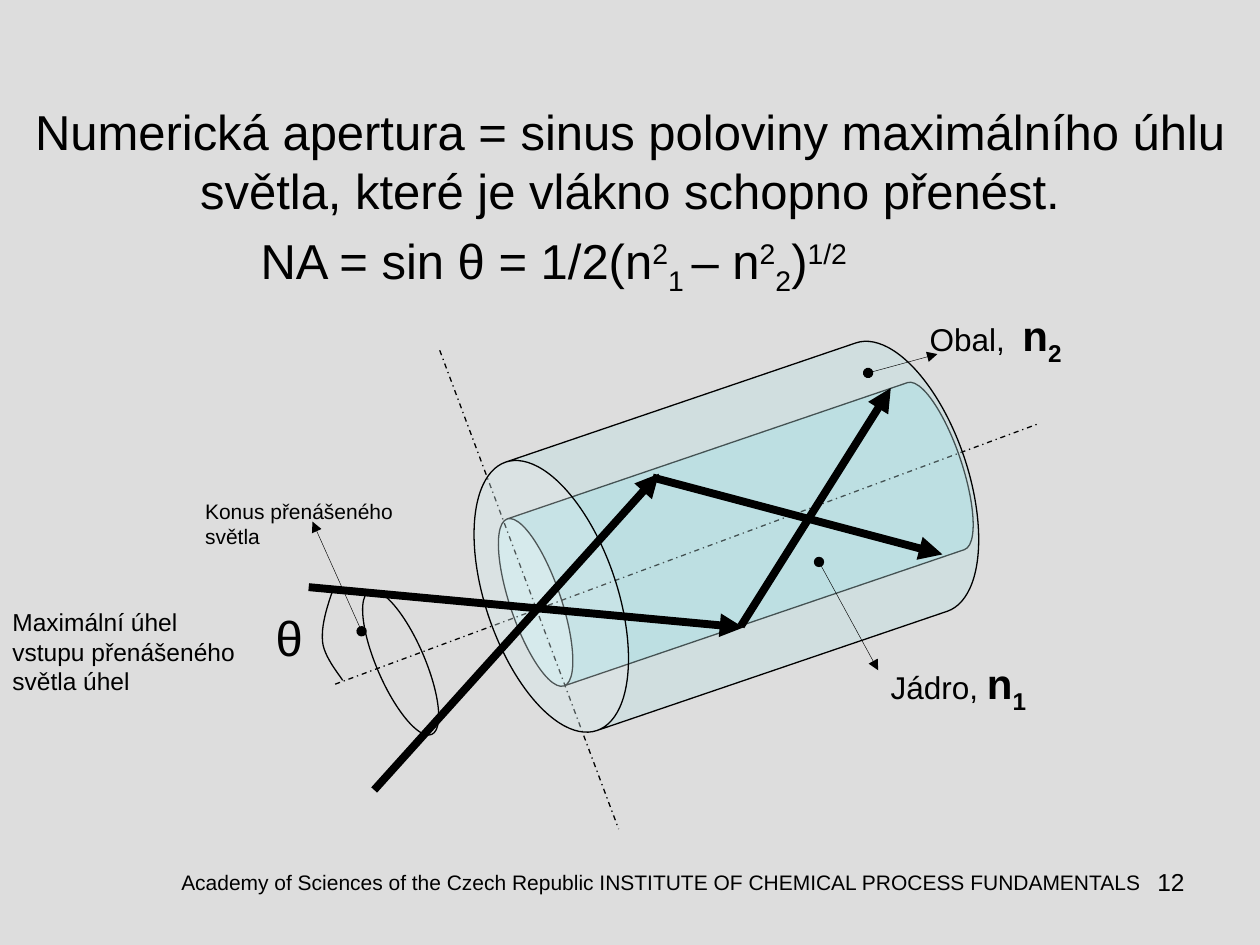
from lxml import etree
from pptx import Presentation
from pptx.dml.color import RGBColor
from pptx.enum.dml import MSO_LINE
from pptx.enum.shapes import MSO_CONNECTOR, MSO_SHAPE
from pptx.enum.text import MSO_ANCHOR, PP_ALIGN
from pptx.oxml.ns import qn
from pptx.util import Inches, Pt

BACKGROUND = RGBColor(0xDD, 0xDD, 0xDD)
BLACK = RGBColor(0x00, 0x00, 0x00)
GLASS = RGBColor(0xBB, 0xE0, 0xE3)
FONT = "Arial"
SUP, SUB = 30, -25
FIBRE_ANGLE = 251.2


def add_text(slide, box, runs, align=PP_ALIGN.LEFT, anchor=MSO_ANCHOR.TOP, inset=None):
    """Add one paragraph; each run is (text, size, baseline %, bold)."""
    frame = slide.shapes.add_textbox(*map(Inches, box)).text_frame
    frame.word_wrap = True
    frame.vertical_anchor = anchor
    if inset is not None:
        frame.margin_left = frame.margin_right = Inches(inset)
        frame.margin_top = frame.margin_bottom = Inches(inset)
    paragraph = frame.paragraphs[0]
    paragraph.alignment = align
    for text, size, baseline, bold in runs:
        run = paragraph.add_run()
        run.text = text
        run.font.name = FONT
        run.font.size = Pt(size)
        run.font.bold = bold
        run.font.color.rgb = BLACK
        if baseline:
            run._r.get_or_add_rPr().set("baseline", str(baseline * 1000))


def plain(text, size):
    return (text, size, 0, False)


def add_line(slide, start, end, width, head=None, tail=None, dash=None):
    line = slide.shapes.add_connector(
        MSO_CONNECTOR.STRAIGHT, *map(Inches, (*start, *end)))
    line.line.color.rgb = BLACK
    line.line.width = Pt(width)
    if dash:
        line.line.dash_style = dash
    outline = line.line._get_or_add_ln()
    for tag, kind in (("a:headEnd", head), ("a:tailEnd", tail)):
        if kind:
            etree.SubElement(outline, qn(tag)).set("type", kind)
    etree.SubElement(line._element.spPr, qn("a:effectLst"))


def style_outline(shape, opacity=None):
    """Thin black outline, with a translucent glass fill if opacity is given."""
    shape.shadow.inherit = False
    shape.line.color.rgb = BLACK
    shape.line.width = Pt(0.75)
    if opacity is None:
        shape.fill.background()
        return
    shape.fill.solid()
    shape.fill.fore_color.rgb = GLASS
    colour = shape._element.spPr.find(qn("a:solidFill"))[0]
    etree.SubElement(colour, qn("a:alpha")).set("val", str(opacity * 1000))


def add_cylinder(slide, box, depth, opacity):
    cylinder = slide.shapes.add_shape(MSO_SHAPE.CAN, *map(Inches, box))
    cylinder.adjustments[0] = depth
    cylinder.rotation = FIBRE_ANGLE
    style_outline(cylinder, opacity)


def bezier(p0, p1, p2, p3, steps=12):
    for i in range(1, steps + 1):
        t = i / steps
        u = 1 - t
        yield tuple(u**3 * a + 3 * u * u * t * b + 3 * u * t * t * c + t**3 * d
                    for a, b, c, d in zip(p0, p1, p2, p3))


def add_heading(slide, left, top, width):
    """Definition of the numerical aperture and its formula."""
    definition = ("Numerická apertura = sinus poloviny maximálního úhlu světla, "
                  "které je vlákno schopno přenést.")
    add_text(slide, (left, top, width, 1.95), [plain(definition, 28)],
             PP_ALIGN.CENTER, MSO_ANCHOR.MIDDLE)
    formula = [("NA = sin θ = 1/2(n", 0), ("2", SUP), ("1 ", SUB), ("– n", 0),
               ("2", SUP), ("2", SUB), (")", 0), ("1/2", SUP)]
    add_text(slide, (left + 1.97, top + 1.48, 6.06, 0.57),
             [(text, 28, baseline, False) for text, baseline in formula])


def add_fibre(slide, left, top):
    """Fibre with its axes, light rays and entry cone."""
    def at(x, y, *size):
        return (left + x, top + y, *size)

    # Core, axes, then the cladding over them
    add_cylinder(slide, at(5.14, 0.36, 1.4, 3.76), 0.288, 86)
    for start, end in [((2.66, 3.43), (8.25, 1.36)), ((3.49, 0.78), (4.91, 4.58))]:
        add_line(slide, at(*start), at(*end), 0.75, dash=MSO_LINE.DASH_DOT)
    add_cylinder(slide, at(4.64, 0.27, 2.25, 3.98), 0.464, 37)

    # Light rays
    for start, end in [((2.45, 2.66), (5.9, 2.98)), ((2.97, 4.27), (5.23, 1.76)),
                       ((5.88, 2.97), (7.07, 1.08)), ((5.18, 1.79), (7.48, 2.4))]:
        add_line(slide, at(*start), at(*end), 4.5, tail="triangle")

    # Entry cone and angle arc
    cone = slide.shapes.add_shape(
        MSO_SHAPE.OVAL, *map(Inches, at(2.99, 2.64, 0.38, 1.24)))
    cone.rotation = 336.6
    style_outline(cone)
    begin, middle, end = at(2.64, 2.69), at(2.56, 3.09), at(2.72, 3.4)
    points = [*bezier(begin, at(2.59, 2.83), at(2.55, 2.97), middle),
              *bezier(middle, at(2.57, 3.21), at(2.69, 3.35), end)]
    builder = slide.shapes.build_freeform(*map(Inches, begin))
    builder.add_line_segments([(Inches(x), Inches(y)) for x, y in points], close=False)
    style_outline(builder.convert_to_shape())


def add_labels(slide, left, top):
    """Captions of the fibre and their pointers."""
    labels = [
        ((2.09, 2.77, 0.63, 0.57), [plain("θ", 28)]),
        ((6.97, 3.17, 1.73, 0.5),
         [plain("Jádro, ", 18), ("n", 24, 0, True), ("1", 24, SUB, True)]),
        ((7.28, 0.41, 1.73, 0.5),
         [plain("Obal,  ", 18), ("n", 24, 0, True), ("2", 24, SUB, True)]),
        ((0, 2.77, 1.97, 0.8),
         [plain("Maximální úhel vstupu přenášeného světla úhel", 14)]),
        ((1.53, 1.91, 1.97, 0.5), [plain("Konus přenášeného světla", 12)]),
    ]
    for (x, y, width, height), runs in labels:
        add_text(slide, (left + x, top + y, width, height), runs)

    pointers = [((6.5, 2.46), (6.97, 3.32)), ((6.89, 0.96), (7.44, 0.81)),
                ((2.87, 3.01), (2.48, 2.14))]
    for (x1, y1), (x2, y2) in pointers:
        add_line(slide, (left + x1, top + y1), (left + x2, top + y2), 0.25,
                 head="oval", tail="triangle")


def add_footer(slide, left, top):
    """Institute name and slide number."""
    institute = ("Academy of Sciences of the Czech Republic "
                 "INSTITUTE OF CHEMICAL PROCESS FUNDAMENTALS")
    add_text(slide, (left, top + 0.07, 8.54, 0.2), [plain(institute, 12)],
             PP_ALIGN.CENTER, inset=0)
    add_text(slide, (left + 6.19, top, 2.33, 0.52), [plain("12", 14)], PP_ALIGN.RIGHT)


def main():
    deck = Presentation()
    deck.slide_width, deck.slide_height = Inches(10), Inches(7.5)
    slide = deck.slides.add_slide(deck.slide_layouts[6])
    slide.background.fill.solid()
    slide.background.fill.fore_color.rgb = BACKGROUND
    add_heading(slide, 0, 0.3, 10)
    add_fibre(slide, 0, 2)
    add_labels(slide, 0, 2)
    add_footer(slide, 0.98, 6.83)
    deck.save("out.pptx")


if __name__ == "__main__":
    main()
